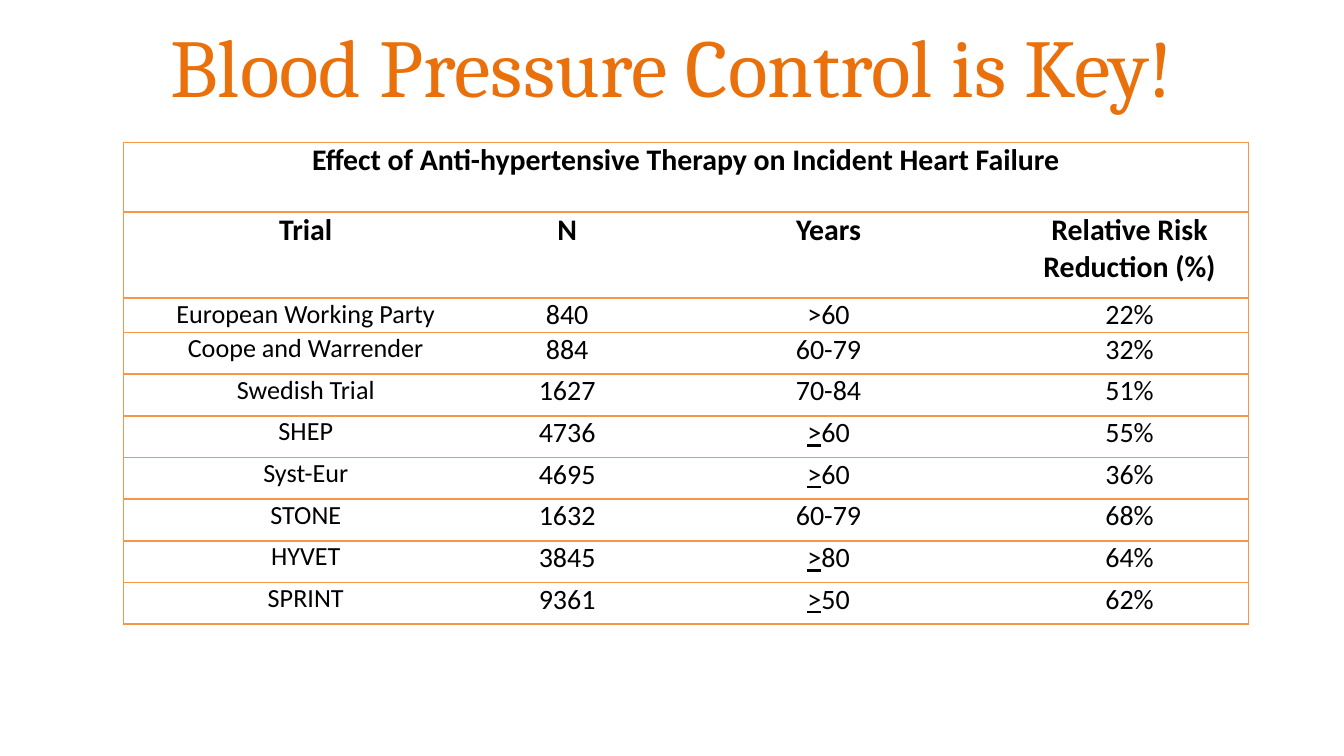
import pptx
import pptx.dml.color
import pptx.enum.text
import pptx.util
from lxml import etree
from pptx.oxml.ns import qn
from pptx.util import Inches, Pt

COLORS = {"title": "E9700A", "border": "F79646", "text": "000000", "cell": "FFFFFF"}
CENTER = pptx.enum.text.PP_ALIGN.CENTER

PAGE_WIDTH = 10
PAGE_HEIGHT = PAGE_WIDTH * 9 / 16

CAPTION = "Effect of Anti-hypertensive Therapy on Incident Heart Failure"
HEADINGS = ["Trial", "N", "Years", "Relative Risk Reduction (%)"]
# Ages are (underlined sign, age range)
TRIALS = [
    ("European Working Party", "840", ("", ">60"), "22%"),
    ("Coope and Warrender", "884", ("", "60-79"), "32%"),
    ("Swedish Trial", "1627", ("", "70-84"), "51%"),
    ("SHEP", "4736", (">", "60"), "55%"),
    ("Syst-Eur", "4695", (">", "60"), "36%"),
    ("STONE", "1632", ("", "60-79"), "68%"),
    ("HYVET", "3845", (">", "80"), "64%"),
    ("SPRINT", "9361", (">", "50"), "62%"),
]
COLUMN_WIDTHS = [2.71, 1.18, 2.71, 1.77]
ROW_HEIGHTS = [0.52, 0.64, 0.25] + [0.31] * 7


def rgb(name):
    return pptx.dml.color.RGBColor.from_string(COLORS[name])


def add_span(para, text, font, size, color, bold=False, underline=False):
    span = para.add_run()
    span.text = text
    span.font.name = font
    span.font.size = Pt(size)
    span.font.bold = bold
    span.font.underline = underline
    span.font.color.rgb = rgb(color)


def set_borders(cell, visible_sides):
    """Draw the named sides (L, R, T, B) and hide the others."""
    properties = cell._tc.get_or_add_tcPr()
    for side in "LRTB":
        line = etree.SubElement(properties, qn(f"a:ln{side}"), w=str(Pt(1)))
        if side in visible_sides:
            fill = etree.SubElement(line, qn("a:solidFill"))
            etree.SubElement(fill, qn("a:srgbClr"), val=COLORS["border"])
        else:
            etree.SubElement(line, qn("a:noFill"))


def fill_cell(cell, spans, size, bold, space_after):
    cell.fill.solid()
    cell.fill.fore_color.rgb = rgb("cell")
    cell.margin_left = cell.margin_right = Inches(0.07)
    cell.margin_top = cell.margin_bottom = 0
    para = cell.text_frame.paragraphs[0]
    para.alignment = CENTER
    para.space_after = Pt(space_after)
    for text, underline in spans:
        if text:
            add_span(para, text, "Calibri", size, "text", bold, underline)


def add_title(page, left, top, width, height):
    title = page.shapes.title
    title.left, title.top = Inches(left), Inches(top)
    title.width, title.height = Inches(width), Inches(height)
    frame = title.text_frame
    frame.word_wrap = True
    frame.vertical_anchor = pptx.enum.text.MSO_ANCHOR.MIDDLE
    para = frame.paragraphs[0]
    para.alignment = CENTER
    add_span(para, "Blood Pressure Control is Key!", "Cambria", 44, "title")


def add_trial_table(page, left, top):
    table = page.shapes.add_table(
        len(ROW_HEIGHTS), len(COLUMN_WIDTHS), Inches(left), Inches(top),
        Inches(sum(COLUMN_WIDTHS)), Inches(sum(ROW_HEIGHTS))).table
    table.first_row = table.horz_banding = False
    for column, width in zip(table.columns, COLUMN_WIDTHS):
        column.width = Inches(width)
    for row, height in zip(table.rows, ROW_HEIGHTS):
        row.height = Inches(height)

    # Horizontal rules on every row, vertical ones on the outside only
    last = len(COLUMN_WIDTHS) - 1
    outer_sides = {0: "L", last: "R"}
    for row_index in range(len(ROW_HEIGHTS)):
        for index in range(len(COLUMN_WIDTHS)):
            is_caption = row_index == 0 and index == 0
            sides = "LR" if is_caption else outer_sides.get(index, "")
            set_borders(table.cell(row_index, index), "TB" + sides)

    # Caption and headings
    table.cell(0, 0).merge(table.cell(0, last))
    fill_cell(table.cell(0, 0), [(CAPTION, False)], 16, True, 6)
    for index, heading in enumerate(HEADINGS):
        fill_cell(table.cell(1, index), [(heading, False)], 16, True, 0)

    # Trials
    for row_index, (name, count, (sign, age), reduction) in enumerate(TRIALS, 2):
        entries = [[(name, False)], [(count, False)],
                   [(sign, True), (age, False)], [(reduction, False)]]
        for index, spans in enumerate(entries):
            size = 14 if index == 0 else 15
            fill_cell(table.cell(row_index, index), spans, size, False, 3)


def main():
    deck = pptx.Presentation()
    deck.slide_width, deck.slide_height = Inches(PAGE_WIDTH), Inches(PAGE_HEIGHT)
    page = deck.slides.add_slide(deck.slide_layouts.get_by_name("Title Only"))
    add_trial_table(page, 0.92, 1.06)
    add_title(page, 0.5, 0.01, 9, 0.94)
    deck.save("out.pptx")


if __name__ == "__main__":
    main()
